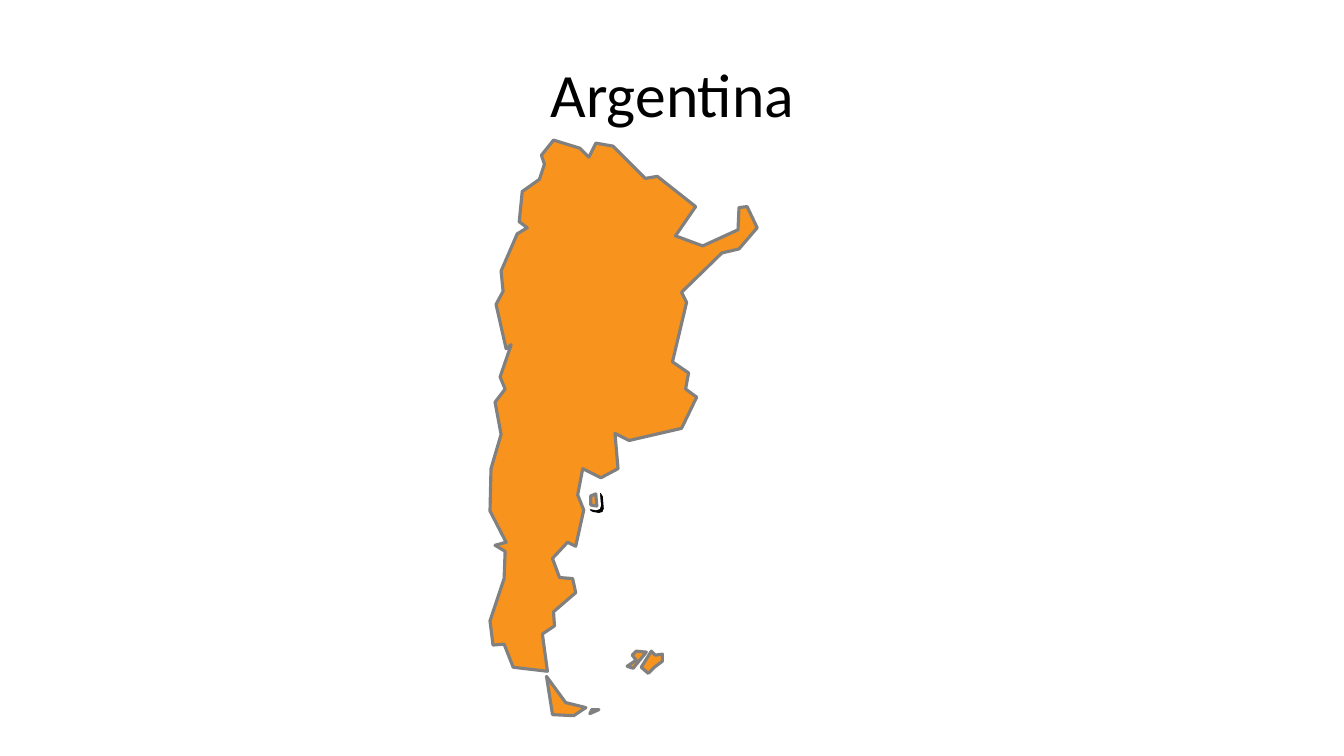
from dataclasses import dataclass

import pptx
import pptx.dml.color
import pptx.enum.text
import pptx.oxml
import pptx.oxml.ns
import pptx.util
from pptx.util import Inches

UNITS_PER_INCH = 100

MAINLAND = [
    (549, 139), (537, 154), (540, 163), (535, 178), (518, 190), (515, 220),
    (523, 226), (513, 232), (497, 269), (499, 289), (492, 302), (502, 346),
    (507, 342), (496, 374), (501, 386), (491, 399), (497, 431), (487, 465),
    (486, 507), (502, 538), (491, 541), (501, 547), (500, 574), (486, 616),
    (489, 640), (500, 639), (509, 662), (543, 666), (538, 629), (550, 621),
    (549, 607), (571, 588), (568, 574), (555, 573), (548, 554), (563, 538),
    (571, 542), (579, 506), (573, 491), (578, 465), (596, 474), (613, 465),
    (610, 430), (624, 437), (676, 425), (691, 394), (680, 386), (683, 370),
    (667, 359), (681, 300), (676, 290), (716, 251), (733, 247), (751, 226),
    (741, 205), (733, 206), (732, 228), (697, 244), (670, 234), (690, 205),
    (652, 175), (640, 177), (608, 145), (591, 142), (584, 156), (575, 147),
]
COAST_ISLET = [(591, 490), (586, 492), (586, 501), (592, 502)]
SOUTH_ISLET = [(587, 704), (585, 708), (594, 704)]
WEST_ISLAND = [
    (627, 650), (631, 655), (622, 661), (628, 663), (641, 647), (631, 646),
]
EAST_ISLAND = [
    (646, 646), (636, 662), (643, 668), (649, 662), (657, 656), (657, 649),
    (650, 650),
]
SOUTHERN_TIP = [
    (542, 671), (548, 709), (569, 710), (581, 702), (561, 697),
]


@dataclass(frozen=True)
class Theme:
    font: str = "Calibri"
    title_size: float = 44
    text: str = "000000"
    land: str = "F8931D"
    border: str = "808080"
    halo: str = "FFFFFF"
    shadow: str = "000000"
    border_width: float = 2.25
    halo_width: float = 6
    shadow_distance: float = 2.8
    shadow_angle: int = 45


def rgb(value):
    return pptx.dml.color.RGBColor.from_string(value)


class MapSlide:
    def __init__(self, prs, theme):
        self.theme = theme
        self.slide = prs.slides.add_slide(prs.slide_layouts[5])

    def title(self, text, left, top, width, height):
        sp = self.slide.shapes.title
        sp.left, sp.top = Inches(left), Inches(top)
        sp.width, sp.height = Inches(width), Inches(height)
        tf = sp.text_frame
        tf.text = text
        tf.vertical_anchor = pptx.enum.text.MSO_ANCHOR.MIDDLE
        p = tf.paragraphs[0]
        p.alignment = pptx.enum.text.PP_ALIGN.CENTER
        p.font.name = self.theme.font
        p.font.size = pptx.util.Pt(self.theme.title_size)
        p.font.color.rgb = rgb(self.theme.text)

    def region(self, outline, line, width):
        builder = self.slide.shapes.build_freeform(
            *outline[0], scale=Inches(1) / UNITS_PER_INCH)
        builder.add_line_segments(outline[1:], close=True)
        sp = builder.convert_to_shape()
        sp.shadow.inherit = False
        sp.fill.solid()
        sp.fill.fore_color.rgb = rgb(self.theme.land)
        sp.line.color.rgb = rgb(line)
        sp.line.width = pptx.util.Pt(width)
        return sp

    def land(self, outline):
        self.region(outline, self.theme.border, self.theme.border_width)

    def halo(self, outline):
        theme = self.theme
        sp = self.region(outline, theme.halo, theme.halo_width)
        effects = sp.element.spPr.find(pptx.oxml.ns.qn("a:effectLst"))
        effects.append(pptx.oxml.parse_xml(
            f'<a:outerShdw {pptx.oxml.ns.nsdecls("a")} blurRad="0" '
            f'dist="{pptx.util.Pt(theme.shadow_distance)}" '
            f'dir="{theme.shadow_angle * 60000}" algn="ctr" rotWithShape="0">'
            f'<a:srgbClr val="{theme.shadow}"/></a:outerShdw>'))


def main():
    prs = pptx.Presentation()
    prs.slide_width, prs.slide_height = Inches(13.33), Inches(7.5)
    s = MapSlide(prs, Theme())
    s.title("Argentina", 0.67, 0.3, 12, 1.25)
    s.halo(COAST_ISLET)
    for outline in (MAINLAND, COAST_ISLET, SOUTH_ISLET,
                    WEST_ISLAND, EAST_ISLAND, SOUTHERN_TIP):
        s.land(outline)
    prs.save("out.pptx")


if __name__ == "__main__":
    main()
